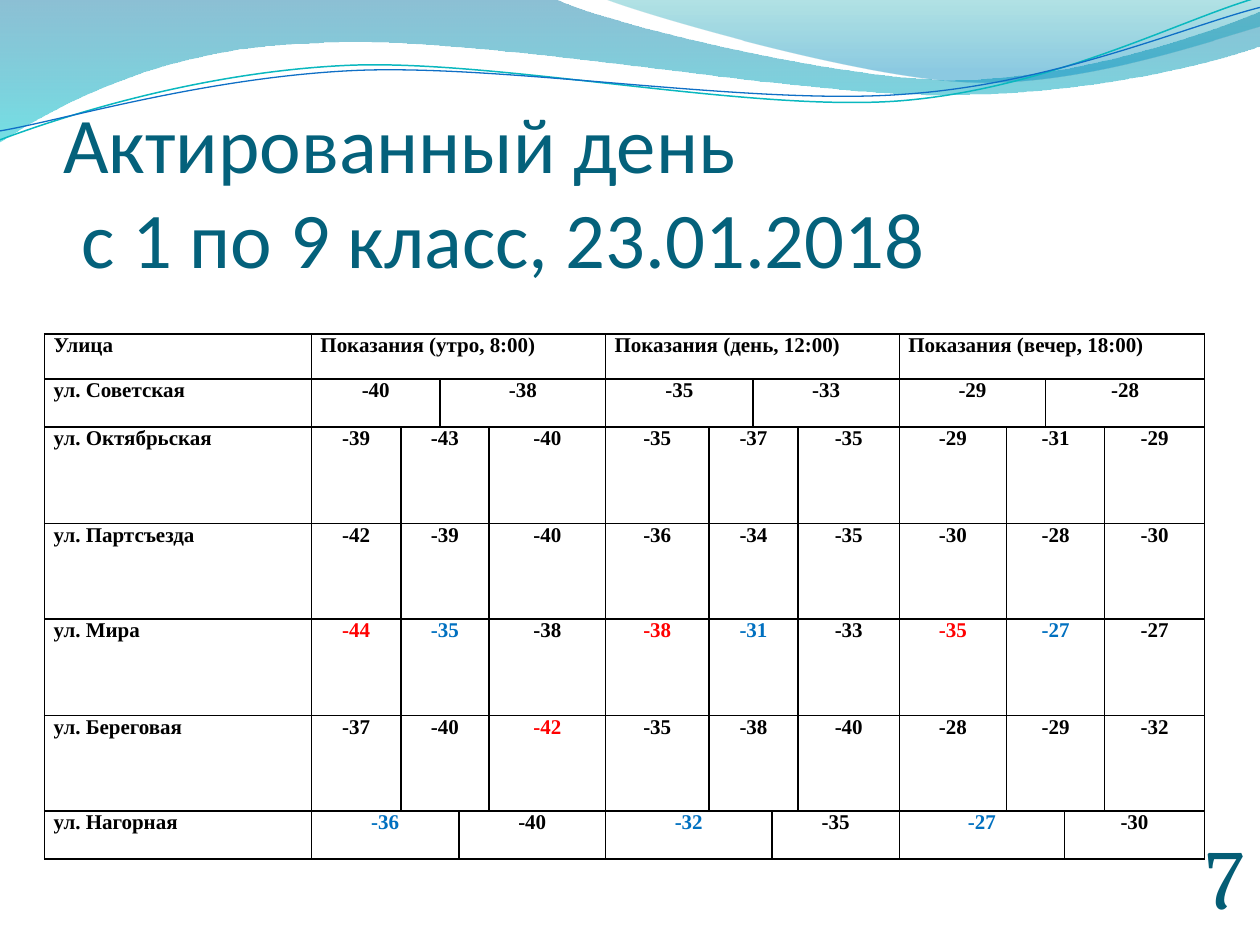
"""Build the slide with street temperature readings for a cancelled school day."""
from dataclasses import dataclass

from lxml import etree
from pptx import Presentation
from pptx.dml.color import RGBColor
from pptx.enum.text import MSO_ANCHOR, PP_ALIGN
from pptx.oxml.ns import qn
from pptx.util import Cm, Pt

BOTTOM = MSO_ANCHOR.BOTTOM
LEFT, CENTER, RIGHT = PP_ALIGN.LEFT, PP_ALIGN.CENTER, PP_ALIGN.RIGHT


@dataclass(frozen=True)
class Theme:
    title: str = "04617B"
    page: str = "045D75"
    ink: str = "000000"
    coldest: str = "FF0000"
    warmest: str = "0070C0"
    teal_line: str = "0AB8BF"
    blue_line: str = "0F6FC6"
    wide_wave: tuple = ((0, "0074A1", 45), (1, "00C6CF", 55))
    short_wave: tuple = ((0, "00A1A9", 30), (0.8, "008BBF", 45))
    title_font: str = "Calibri"
    page_font: str = "Cambria"
    table_font: str = "Times New Roman"
    title_size: int = 45
    page_size: int = 48
    table_size: int = 12


THEME = Theme()

CURVE_TILT = -2.7
WIDE_WAVE = [
    [(0, 0)],
    [(11.18, -0.03)],
    [(12.09, 0.43), (16.87, 1.6), (19.25, 1.6)],
    [(21.67, 1.6), (24.33, 0.66), (25.4, 0.23)],
    [(25.43, 0.91)],
    [(24.97, 1.12), (22.1, 1.93), (18.95, 1.91)],
    [(15.8, 1.91), (9.7, 0.71), (6.53, 0.86)],
    [(3.28, 0.91), (1.17, 2.11), (-0.03, 2.87)],
    [(0, 0)],
]
SHORT_WAVE = [
    [(12.17, -0.03)],
    [(12.93, 0.28), (17.32, 1.57), (19.53, 1.65)],
    [(21.74, 1.75), (24.41, 0.81), (25.4, 0.53)],
    [(25.4, 0)],
    [(12.17, -0.03)],
]
TEAL_CURVE = [
    [(-0.05, 2.22)],
    [(1.19, 1.82), (4.02, 1.04), (7.05, 1.05)],
    [(10.05, 1.07), (15.02, 2.37), (18.08, 2.29)],
    [(21.13, 2.2), (23.86, 0.91), (25.41, 0.55)],
]
BLUE_CURVE = [
    [(-0.04, 2.04)],
    [(1.16, 1.9), (4.17, 1.15), (7.2, 1.16)],
    [(10.25, 1.18), (15.13, 2.25), (18.19, 2.16)],
    [(21.22, 2.1), (23.93, 1.06), (25.45, 0.75)],
]

COLUMN_WIDTHS = [5.38, 1.8, 0.79, 0.38, 0.61, 2.35, 2.08, 0.89, 0.38, 0.53, 2.04,
                 2.16, 0.79, 0.38, 0.81, 2.01]
ROW_HEIGHTS = [0.91, 0.97, 1.94, 1.93, 1.94, 1.93, 0.97]
HEADINGS = ["Показания (утро, 8:00)", "Показания (день, 12:00)", "Показания (вечер, 18:00)"]
COLD, WARM = THEME.coldest, THEME.warmest
STREETS = [
    ("Улица", (5,), HEADINGS, {}),
    ("ул. Советская", (2, 3), [-40, -38, -35, -33, -29, -28], {}),
    ("ул. Октябрьская", (1, 3, 1), [-39, -43, -40, -35, -37, -35, -29, -31, -29], {}),
    ("ул. Партсъезда", (1, 3, 1), [-42, -39, -40, -36, -34, -35, -30, -28, -30], {}),
    ("ул. Мира", (1, 3, 1), [-44, -35, -38, -38, -31, -33, -35, -27, -27],
     {0: COLD, 1: WARM, 3: COLD, 4: WARM, 6: COLD, 7: WARM}),
    ("ул. Береговая", (1, 3, 1), [-37, -40, -42, -35, -38, -40, -28, -29, -32], {2: COLD}),
    ("ул. Нагорная", (3, 2), [-36, -40, -32, -35, -27, -30], {0: WARM, 2: WARM, 4: WARM}),
]


class SlideBuilder:
    """Draw styled elements on the current slide."""

    def __init__(self, slide, theme):
        self.slide = slide
        self.theme = theme

    def outline(self, segments, closed):
        points = [(Cm(x), Cm(y)) for segment in segments for x, y in segment]
        builder = self.slide.shapes.build_freeform(*points[0])
        builder.add_line_segments(points[1:], close=closed)
        outline = builder.convert_to_shape()
        outline.shadow.inherit = False
        steps = iter(list(outline._element.iter(qn("a:lnTo"))))
        for segment in segments[1:]:
            lines = [next(steps) for _ in segment]
            if len(lines) == 3:
                bend = etree.Element(qn("a:cubicBezTo"))
                lines[0].addprevious(bend)
                for line in lines:
                    bend.append(line[0])
                    line.getparent().remove(line)
        return outline

    def wave(self, segments, stops):
        wave = self.outline(segments, True)
        wave.line.fill.background()
        wave.fill.gradient()
        wave.fill.gradient_angle = 270
        for stop, (position, color, _) in zip(wave.fill.gradient_stops, stops):
            stop.position = position
            stop.color.rgb = RGBColor.from_string(color)
        colors = wave._element.spPr.iter(qn("a:srgbClr"))
        for color, (_, _, opacity) in zip(colors, stops):
            etree.SubElement(color, qn("a:alpha"), val=str(opacity * 1000))

    def curve(self, segments, color, width):
        curve = self.outline(segments, False)
        curve.rotation = CURVE_TILT
        curve.fill.background()
        curve.line.color.rgb = RGBColor.from_string(color)
        curve.line.width = Pt(width)

    def format(self, paragraph, font, size, color, align, bold=False):
        paragraph.alignment = align
        for run in paragraph.runs:
            run.font.name = font
            run.font.size = Pt(size)
            run.font.bold = bold
            run.font.color.rgb = RGBColor.from_string(color)

    def text(self, box, words, font, size, color, align=LEFT):
        frame = self.slide.shapes.add_textbox(*map(Cm, box)).text_frame
        frame.word_wrap = True
        frame.vertical_anchor = BOTTOM
        frame.margin_left = frame.margin_right = frame.margin_top = frame.margin_bottom = 0
        paragraph = frame.paragraphs[0]
        paragraph.text = words
        self.format(paragraph, font, size, color, align)

    def cell(self, cell, words, color, align):
        cell.margin_left = cell.margin_right = Cm(0.18)
        cell.margin_top = cell.margin_bottom = 0
        paragraph = cell.text_frame.paragraphs[0]
        paragraph.text = str(words)
        theme = self.theme
        self.format(paragraph, theme.table_font, theme.table_size, color, align, True)

    def border(self, cell):
        properties = cell._tc.get_or_add_tcPr()
        for side in ("lnL", "lnR", "lnT", "lnB"):
            edge = etree.SubElement(properties, qn(f"a:{side}"), w=str(Pt(1)))
            fill = etree.SubElement(edge, qn("a:solidFill"))
            etree.SubElement(fill, qn("a:srgbClr"), val=self.theme.ink)
        cell.fill.background()

    def table(self, box, widths, heights, rows):
        table = self.slide.shapes.add_table(len(heights), len(widths), *map(Cm, box)).table
        table.first_row = table.horz_banding = False
        for column, width in zip(table.columns, widths):
            column.width = Cm(width)
        for row, height in zip(table.rows, heights):
            row.height = Cm(height)
        for cell in table.iter_cells():
            self.border(cell)
        for row, (street, spans, readings, accents) in enumerate(rows):
            self.cell(table.cell(row, 0), street, self.theme.ink, LEFT)
            align = CENTER if row else LEFT
            column = 1
            for index, reading in enumerate(readings):
                span = spans[index % len(spans)]
                origin = table.cell(row, column)
                if span > 1:
                    origin.merge(table.cell(row, column + span - 1))
                self.cell(origin, reading, accents.get(index, self.theme.ink), align)
                column += span


def main():
    deck = Presentation()
    deck.slide_width, deck.slide_height = Cm(25.4), Cm(19.05)
    builder = SlideBuilder(deck.slides.add_slide(deck.slide_layouts[6]), THEME)
    builder.wave(WIDE_WAVE, THEME.wide_wave)
    builder.wave(SHORT_WAVE, THEME.short_wave)
    builder.curve(TEAL_CURVE, THEME.teal_line, 0.85)
    builder.curve(BLUE_CURVE, THEME.blue_line, 0.75)
    builder.text((1.28, 1.97, 22.86, 3.76), "Актированный день\v с 1 по 9 класс, 23.01.2018",
                 THEME.title_font, THEME.title_size, THEME.title)
    builder.table((0.9, 6.73, 23.39, 10.59), COLUMN_WIDTHS, ROW_HEIGHTS, STREETS)
    builder.text((22.99, 17.65, 2.11, 1.02), "7",
                 THEME.page_font, THEME.page_size, THEME.page, RIGHT)
    deck.save("out.pptx")


if __name__ == "__main__":
    main()
